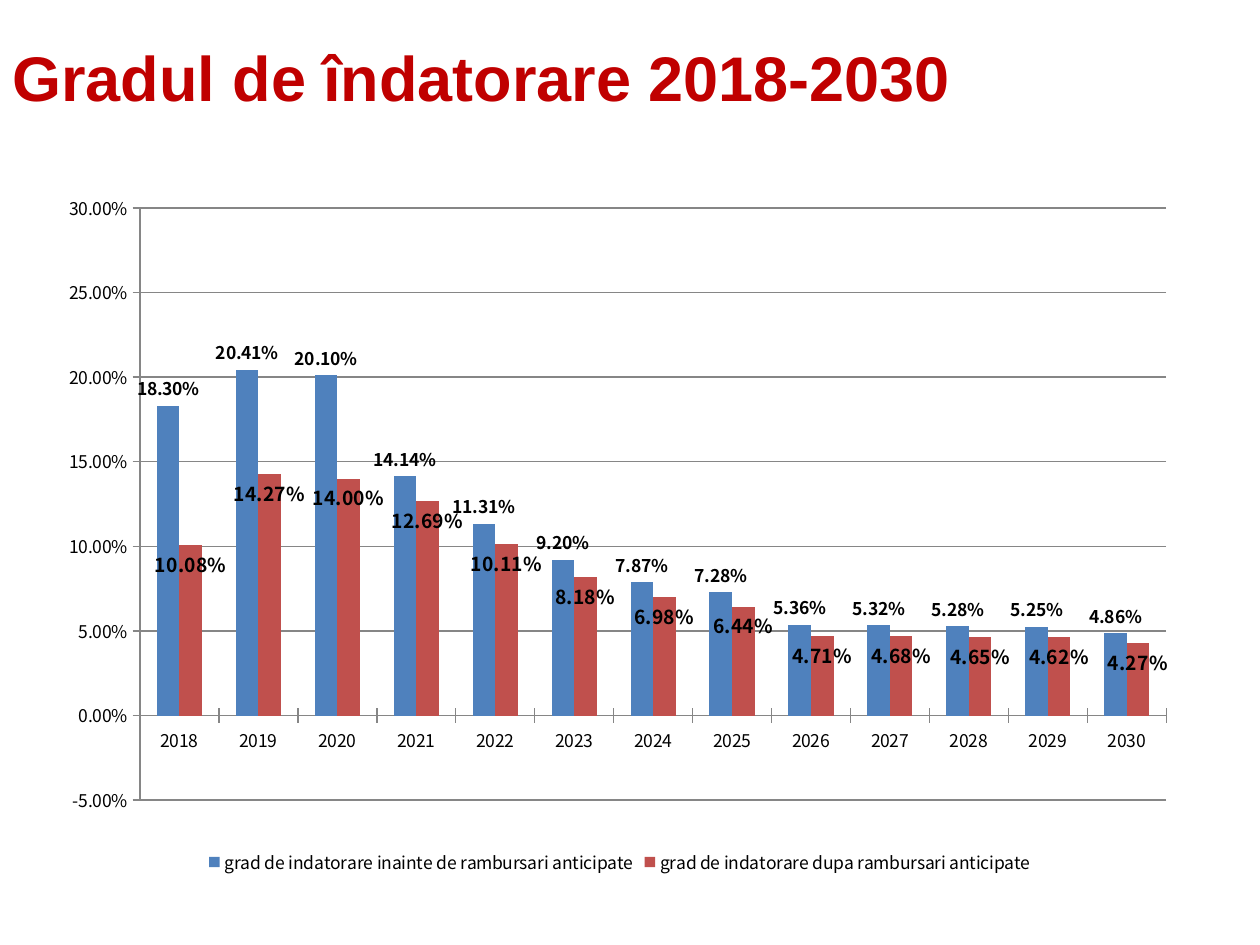
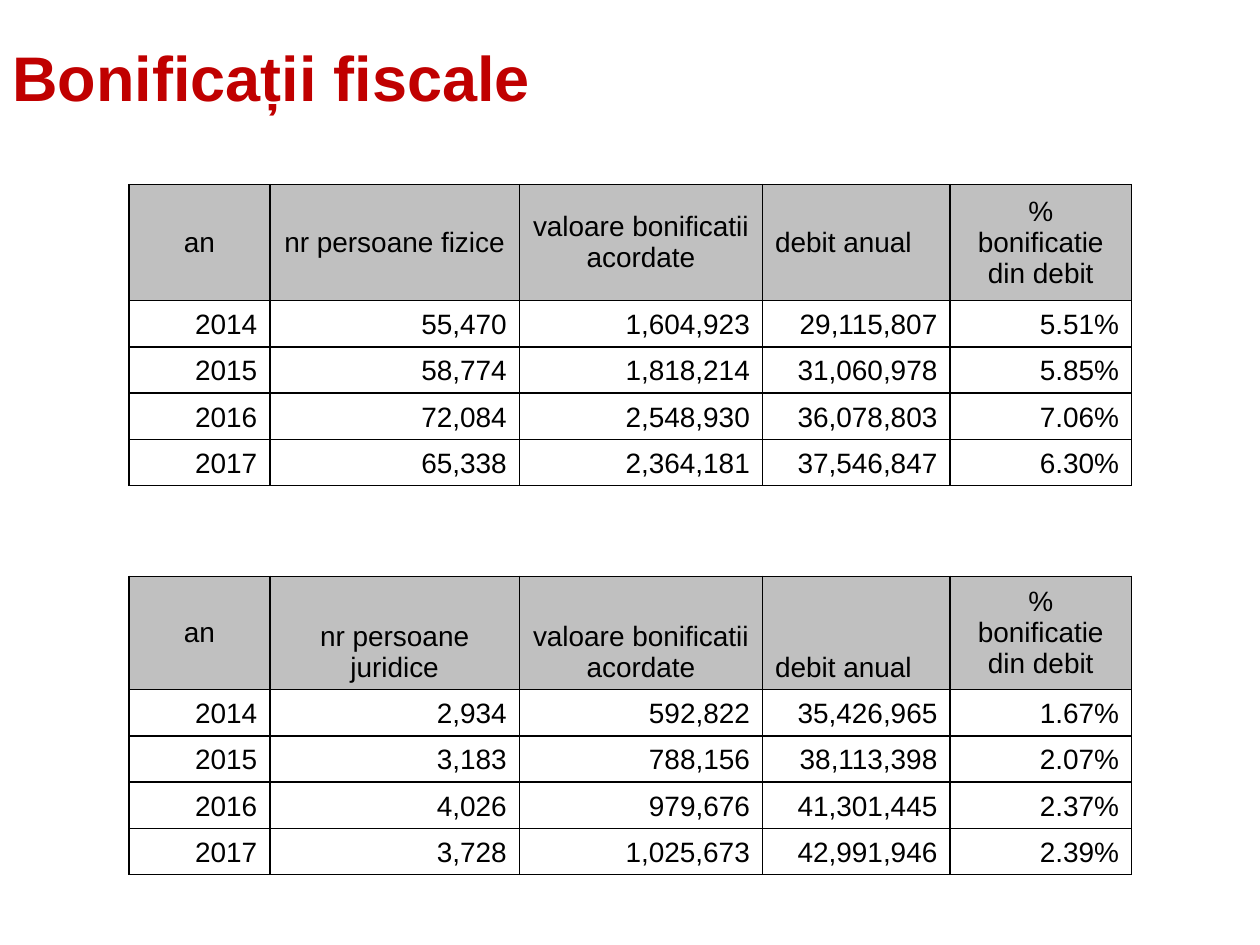
import pptx
import pptx.chart.data
import pptx.dml.color
import pptx.enum.chart
import pptx.enum.text
import pptx.oxml
import pptx.oxml.ns
import pptx.util

Cm = pptx.util.Cm
Pt = pptx.util.Pt
RGBColor = pptx.dml.color.RGBColor
ALIGN = pptx.enum.text.PP_ALIGN
ANCHOR = pptx.enum.text.MSO_ANCHOR
LABEL = pptx.enum.chart.XL_LABEL_POSITION

RED = RGBColor(0xC0, 0x00, 0x00)
BLACK = RGBColor(0x00, 0x00, 0x00)
SILVER = RGBColor(0xC0, 0xC0, 0xC0)
GRAY = RGBColor(0x86, 0x86, 0x86)
BLUE = RGBColor(0x4F, 0x81, 0xBD)
BRICK = RGBColor(0xC0, 0x50, 0x4D)

TEXT_FONT = "Arial"
CHART_FONT = "Noto Sans CJK KR"
PERCENT = "0.00%"

YEARS = [str(year) for year in range(2018, 2031)]
BEFORE = [18.30, 20.41, 20.10, 14.14, 11.31, 9.20, 7.87, 7.28, 5.36, 5.32, 5.28, 5.25, 4.86]
AFTER = [10.08, 14.27, 14.00, 12.69, 10.11, 8.18, 6.98, 6.44, 4.71, 4.68, 4.65, 4.62, 4.27]
DEBT_SERIES = [
    ("grad de indatorare inainte de rambursari anticipate", BEFORE, BLUE, LABEL.OUTSIDE_END, 10),
    ("grad de indatorare dupa rambursari anticipate", AFTER, BRICK, LABEL.INSIDE_END, 11),
]


def header(people):
    return ["an", people, "valoare bonificatii acordate", "debit anual",
            "% bonificatie din debit"]


BONUS_ROWS = [
    header("nr persoane fizice"),
    ["2014", "55,470", "1,604,923", "29,115,807", "5.51%"],
    ["2015", "58,774", "1,818,214", "31,060,978", "5.85%"],
    ["2016", "72,084", "2,548,930", "36,078,803", "7.06%"],
    ["2017", "65,338", "2,364,181", "37,546,847", "6.30%"],
    [""] * 5,
    header("nr persoane juridice"),
    ["2014", "2,934", "592,822", "35,426,965", "1.67%"],
    ["2015", "3,183", "788,156", "38,113,398", "2.07%"],
    ["2016", "4,026", "979,676", "41,301,445", "2.37%"],
    ["2017", "3,728", "1,025,673", "42,991,946", "2.39%"],
]
FIRST_HEADER, GAP, SECOND_HEADER = 0, 5, 6
COL_WIDTHS = [2.84, 5.03, 4.9, 3.78, 3.66]
ROW_HEIGHTS = {FIRST_HEADER: 2.34, GAP: 1.83, SECOND_HEADER: 1.4}
DATA_HEIGHT = 0.87


class Deck:
    def __init__(self):
        self.prs = pptx.Presentation()
        self.prs.slide_width = Cm(25.4)
        self.prs.slide_height = Cm(19.05)
        self.s = None

    def slide(self, title):
        self.s = self.prs.slides.add_slide(self.prs.slide_layouts[6])
        sp = self.s.shapes.add_textbox(Cm(0), Cm(0.05), Cm(25.4), Cm(2.97))
        tf = sp.text_frame
        tf.word_wrap = True
        tf.vertical_anchor = ANCHOR.MIDDLE
        p = tf.paragraphs[0]
        p.text = title
        self.style(p.font, 36, RED, bold=True)

    def style(self, font, size, color=BLACK, name=TEXT_FONT, bold=False):
        font.name = name
        font.size = Pt(size)
        font.bold = bold
        font.color.rgb = color

    def line(self, fmt):
        fmt.line.color.rgb = GRAY
        fmt.line.width = Pt(0.75)

    def column_chart(self, x, y, w, h, categories, series, plot_area):
        data = pptx.chart.data.CategoryChartData(number_format=PERCENT)
        data.categories = categories
        for name, values, *_ in series:
            data.add_series(name, [round(v / 100, 4) for v in values])
        kind = pptx.enum.chart.XL_CHART_TYPE.COLUMN_CLUSTERED
        chart = self.s.shapes.add_chart(kind, Cm(x), Cm(y), Cm(w), Cm(h), data).chart
        self.style(chart.font, 10, name=CHART_FONT)
        chart.has_title = False
        chart.has_legend = True
        chart.legend.position = pptx.enum.chart.XL_LEGEND_POSITION.BOTTOM
        chart.legend.include_in_layout = False

        axis = chart.value_axis
        axis.minimum_scale, axis.maximum_scale, axis.major_unit = -0.05, 0.3, 0.05
        axis.tick_labels.number_format = PERCENT
        axis.tick_labels.number_format_is_linked = False
        axis.has_major_gridlines = True
        self.line(axis.major_gridlines.format)
        for axis in (chart.value_axis, chart.category_axis):
            axis.major_tick_mark = pptx.enum.chart.XL_TICK_MARK.CROSS
            self.line(axis.format)

        plot = chart.plots[0]
        plot.gap_width = 150
        plot.overlap = 0
        plot.vary_by_categories = False
        for ser, (_, _, color, position, size) in zip(plot.series, series):
            ser.format.fill.solid()
            ser.format.fill.fore_color.rgb = color
            ser.invert_if_negative = False
            labels = ser.data_labels
            labels.show_value = True
            labels.position = position
            labels.number_format = PERCENT
            labels.number_format_is_linked = False
            self.style(labels.font, size, name=CHART_FONT, bold=True)
        self.place_plot(chart, plot_area)

    def place_plot(self, chart, area):
        ns = pptx.oxml.ns
        sizes = "".join(f'<c:{tag} val="{v}"/>' for tag, v in zip("xywh", area))
        layout = pptx.oxml.parse_xml(
            f'<c:layout {ns.nsdecls("c")}><c:manualLayout><c:layoutTarget val="inner"/>'
            f'<c:xMode val="edge"/><c:yMode val="edge"/>{sizes}</c:manualLayout></c:layout>')
        plot_area = chart._chartSpace.chart.plotArea
        for old in plot_area.findall(ns.qn("c:layout")):
            plot_area.remove(old)
        plot_area.insert(0, layout)

    def borders(self, cell, visible):
        tcPr = cell._tc.get_or_add_tcPr()
        for side in "LRTB":
            fill = (f'<a:solidFill><a:srgbClr val="{BLACK}"/></a:solidFill>'
                    if side in visible else "<a:noFill/>")
            tcPr.append(pptx.oxml.parse_xml(
                f'<a:ln{side} {pptx.oxml.ns.nsdecls("a")} w="{Pt(1)}">{fill}</a:ln{side}>'))

    def cell(self, cell, text, align, anchor, fill=None, sides="LRTB"):
        self.borders(cell, sides)
        if fill is None:
            cell.fill.background()
        else:
            cell.fill.solid()
            cell.fill.fore_color.rgb = fill
        cell.vertical_anchor = anchor
        p = cell.text_frame.paragraphs[0]
        p.text = text
        p.alignment = align
        self.style(p.font, 16)

    def bonus_table(self, x, y, rows):
        heights = [ROW_HEIGHTS.get(i, DATA_HEIGHT) for i in range(len(rows))]
        table = self.s.shapes.add_table(
            len(rows), len(COL_WIDTHS), Cm(x), Cm(y),
            Cm(sum(COL_WIDTHS)), Cm(sum(heights))).table
        table.first_row = table.horz_banding = False
        for col, width in zip(table.columns, COL_WIDTHS):
            col.width = Cm(width)
        for i, (row, height) in enumerate(zip(rows, heights)):
            table.rows[i].height = Cm(height)
            for j, text in enumerate(row):
                cell = table.cell(i, j)
                if i in (FIRST_HEADER, SECOND_HEADER):
                    align = ALIGN.LEFT if j == 3 else ALIGN.CENTER
                    middle = i == FIRST_HEADER or j in (0, 4)
                    anchor = ANCHOR.MIDDLE if middle else ANCHOR.BOTTOM
                    self.cell(cell, text, align, anchor, SILVER)
                else:
                    sides = "TB" if i == GAP else "LRTB"
                    self.cell(cell, text, ALIGN.RIGHT, ANCHOR.BOTTOM, sides=sides)


def main():
    deck = Deck()
    deck.slide("Gradul de îndatorare 2018-2030")
    deck.column_chart(1.09, 3.94, 22.81, 13.79, YEARS, DEBT_SERIES,
                      (0.076, 0.017, 0.907, 0.867))
    deck.slide("Bonificații fiscale")
    deck.bonus_table(2.6, 3.72, BONUS_ROWS)
    deck.prs.save("out.pptx")


if __name__ == "__main__":
    main()
